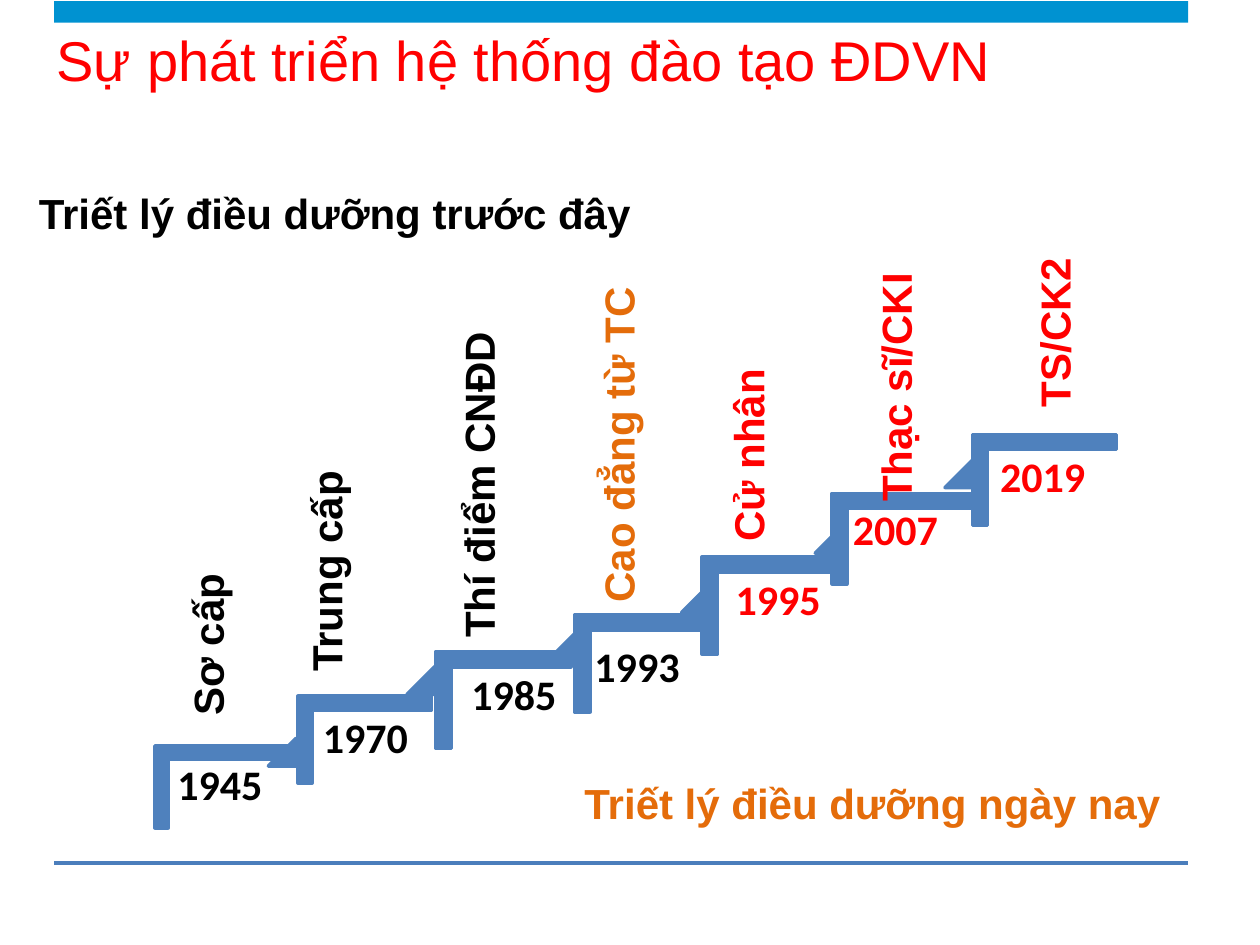
from dataclasses import dataclass
from typing import NamedTuple, Optional

from lxml import etree
from pptx import Presentation
from pptx.dml.color import RGBColor
from pptx.enum.shapes import MSO_CONNECTOR, MSO_SHAPE
from pptx.enum.text import MSO_ANCHOR, MSO_AUTO_SIZE, PP_ALIGN
from pptx.oxml.ns import qn
from pptx.util import Inches, Pt

RECT, WEDGE = MSO_SHAPE.RECTANGLE, MSO_SHAPE.ISOSCELES_TRIANGLE
STRAIGHT = MSO_CONNECTOR.STRAIGHT
LEFT, MID = PP_ALIGN.LEFT, PP_ALIGN.CENTER
TOP = MSO_ANCHOR.TOP
FIT, FIXED = MSO_AUTO_SIZE.SHAPE_TO_FIT_TEXT, MSO_AUTO_SIZE.NONE

WIDE, HIGH = Inches(10), Inches(7.5)
COLS, ROWS = 100, 75  # square grid cells


@dataclass(frozen=True)
class Theme:
    band: str = "0092D1"
    step: str = "4F81BD"
    rule: str = "4B7EBC"
    dark: str = "000000"
    red: str = "FF0000"
    gold: str = "E46C0A"
    sans: str = "Arial"
    num: str = "Calibri"
    head: int = 32
    body: int = 24


T = Theme()


class Box(NamedTuple):
    """Left, top, width and height in grid cells."""
    x: float
    y: float
    w: float
    h: float

    def emu(self) -> tuple:
        return (round(self.x * WIDE / COLS), round(self.y * HIGH / ROWS),
                round(self.w * WIDE / COLS), round(self.h * HIGH / ROWS))


class Label(NamedTuple):
    text: str
    box: Box
    align: PP_ALIGN = LEFT
    pad: float = 0.05


class Stage(NamedTuple):
    stair: Box
    wedge: Optional[tuple]
    year: Label
    name: Label
    color: str


STAGES = [
    Stage(Box(12.3, 59.2, 12.3, 6.5), (21.3, 58.6),
          Label("1945", Box(13.1, 60.2, 12.5, 4.7)),
          Label("Sơ cấp", Box(14.4, 20.2, 5.7, 37.6)), T.dark),
    Stage(Box(23.65, 55.25, 10.6, 6.9), (32.3, 52.9),
          Label("1970", Box(23.2, 55.9, 11.6, 5), MID, 0.1),
          Label("Trung cấp", Box(23.8, 19.8, 5.7, 34.5)), T.dark),
    Stage(Box(34.6, 51.7, 10.7, 7.7), (43.5, 50.2),
          Label("1985", Box(35, 52.5, 11.6, 3.7), MID, 0.1),
          Label("Thí điểm CNĐD", Box(35.9, 22.4, 5.7, 29.2)), T.dark),
    Stage(Box(45.6, 48.8, 10.7, 7.7), (54.1, 46.4),
          Label("1993", Box(46.2, 50.8, 11.7, 4.7)),
          Label("Cao đẳng từ TC", Box(47, 16.7, 5.7, 32.1)), T.gold),
    Stage(Box(55.7, 44.2, 10.7, 7.7), (64.7, 41.7),
          Label("1995", Box(57.4, 45, 11.6, 3.1), LEFT, 0.1),
          Label("Cử nhân", Box(57.3, 26.1, 5.7, 20.1), MID), T.red),
    Stage(Box(66.05, 39.15, 11.1, 7.2), (75, 36.5),
          Label("2007", Box(66.7, 39.9, 10.3, 4.7)),
          Label("Thạc sĩ/CKI", Box(69, 19.9, 10.1, 21.7), MID), T.red),
    Stage(Box(77.2, 34.5, 11.4, 7.2), None,
          Label("2019", Box(78.4, 35.7, 13.3, 4.7)),
          Label("TS/CK2", Box(81.6, 13.8, 5.7, 19.5)), T.red),
]
YEAR_DARK = {"1993"}  # year stays dark although its name is coloured
NOTES = [
    (Label("Triết lý điều dưỡng trước đây", Box(2.1, 14.4, 50.4, 5)), T.dark),
    (Label("Triết lý điều dưỡng ngày nay", Box(45.4, 61.2, 50.4, 5)), T.gold),
]


def style(para, face: str, size: int, color: str, bold: bool = True) -> None:
    para.font.name, para.font.size, para.font.bold = face, Pt(size), bold
    para.font.color.rgb = RGBColor.from_string(color)


def shape(slide, kind, box: Box, color: str, edge: float = 2):
    item = slide.shapes.add_shape(kind, *box.emu())
    item.shadow.inherit = False
    item.fill.solid()
    item.fill.fore_color.rgb = RGBColor.from_string(color)
    if edge:
        item.line.color.rgb = RGBColor.from_string(color)
        item.line.width = Pt(edge)
    else:
        item.line.fill.background()
    return item


def stair(slide, box: Box) -> None:
    """Draw a riser and tread: an L turned a quarter, filling the given box."""
    turn = Box(box.x + (box.w - box.h) / 2, box.y + (box.h - box.w) / 2, box.h, box.w)
    item = shape(slide, RECT, turn, T.step)
    item.rotation = 90
    # The L preset has no enum member, so it is named in the XML.
    form = item._element.spPr.find(qn("a:prstGeom"))
    form.set("prst", "corner")
    for old in list(form):
        form.remove(old)
    guides = etree.SubElement(form, qn("a:avLst"))
    for name in ("adj1", "adj2"):
        etree.SubElement(guides, qn("a:gd"), name=name, fmla="val 16100")


def label(slide, item: Label, face: str, color: str,
          space: Optional[float] = 0.9, turn: bool = False) -> None:
    frame = slide.shapes.add_textbox(*item.box.emu()).text_frame
    frame.word_wrap = True
    frame.auto_size = FIT if item.pad < 0.1 else FIXED
    frame.margin_top = frame.margin_bottom = Inches(item.pad)
    if turn:
        frame._txBody.bodyPr.set("vert", "vert270")
    para = frame.paragraphs[0]
    para.text, para.alignment, para.line_spacing = item.text, item.align, space
    style(para, face, T.body, color)


def rule(slide, x: float, y: float, end: float) -> None:
    left, top, width, _ = Box(x, y, end - x, 0).emu()
    line = slide.shapes.add_connector(STRAIGHT, left, top, left + width, top)
    line.line.color.rgb = RGBColor.from_string(T.rule)
    line.line.width = Pt(2.25)
    etree.SubElement(line._element.spPr, qn("a:effectLst"))


def title(slide, text: str, box: Box) -> None:
    head = slide.shapes.title
    head.left, head.top, head.width, head.height = box.emu()
    frame = head.text_frame
    frame.auto_size, frame.vertical_anchor = FIXED, TOP
    para = frame.paragraphs[0]
    para.text, para.alignment, para.line_spacing = text, LEFT, Pt(25)
    style(para, T.sans, T.head, T.red, False)


def main() -> None:
    deck = Presentation()
    deck.slide_width, deck.slide_height = WIDE, HIGH
    slide = deck.slides.add_slide(deck.slide_layouts[5])
    title(slide, "Sự phát triển hệ thống đào tạo ĐDVN", Box(3.5, 3.4, 96.4, 6.6))
    shape(slide, RECT, Box(4.3, 0.1, 90, 1.7), T.band, 0)
    rule(slide, 4.3, 68.5, 94.3)
    for stage in STAGES:
        stair(slide, stage.stair)
        if stage.wedge:
            wedge = shape(slide, WEDGE, Box(*stage.wedge, 2.2, 2.2), T.step)
            wedge.adjustments[0] = 1
    for stage in STAGES:
        tint = T.dark if stage.year.text in YEAR_DARK else stage.color
        label(slide, stage.year, T.num, tint)
        label(slide, stage.name, T.sans, stage.color, turn=True)
    for note, color in NOTES:
        label(slide, note, T.sans, color, None)
    deck.save("out.pptx")


if __name__ == "__main__":
    main()
